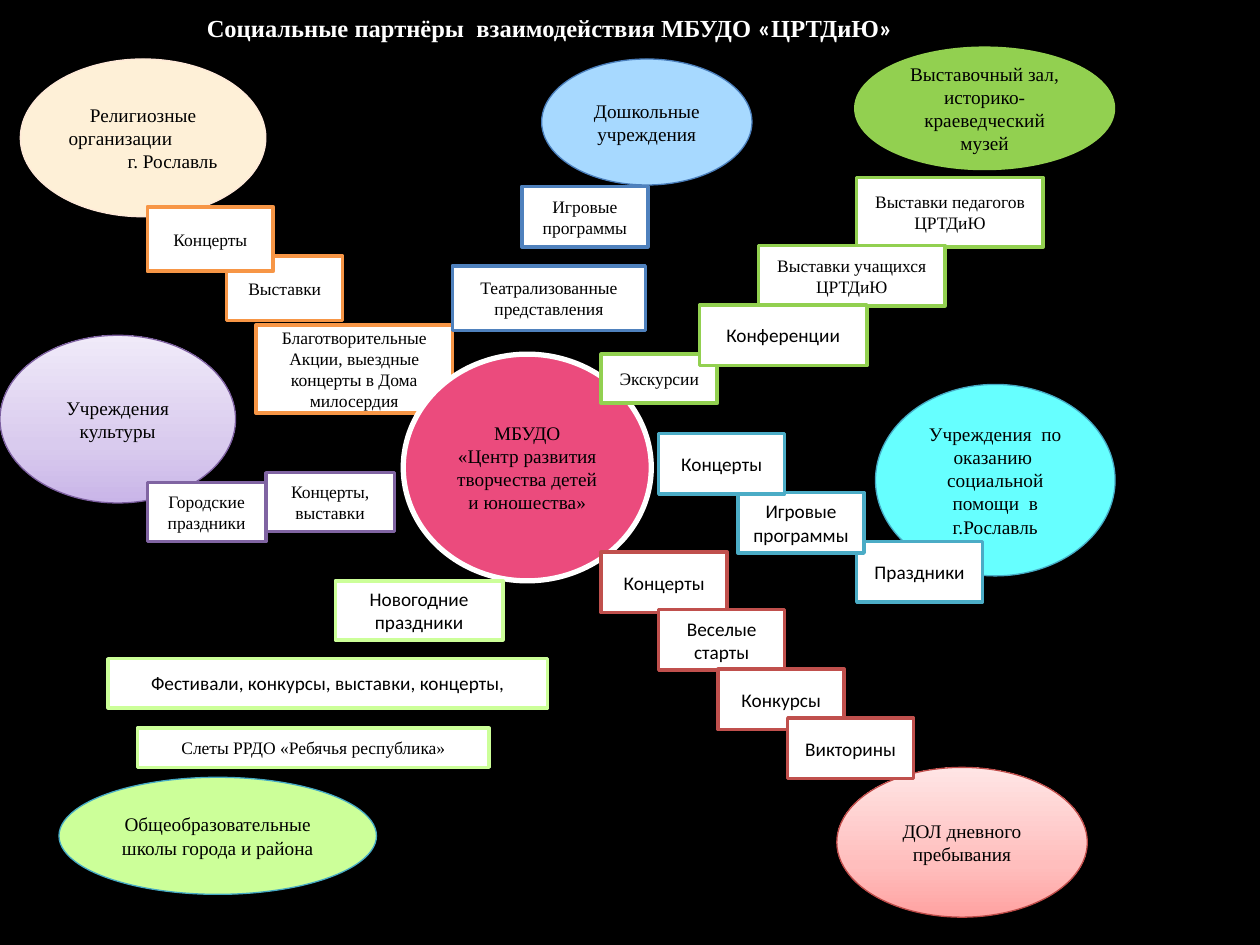
from copy import deepcopy

from pptx import Presentation
from pptx.dml.color import RGBColor
from pptx.enum.shapes import MSO_SHAPE as SHAPE
from pptx.enum.text import MSO_ANCHOR as ANCHOR, MSO_AUTO_SIZE as AUTO, PP_ALIGN as ALIGN
from pptx.oxml.ns import qn
from pptx.util import Cm, Pt

COLORS = {
    "black": "000000", "white": "FFFFFF", "pink": "EB4B7D",
    "sky": "A7D9FF", "sky_edge": "4A7EBB", "blue": "4F81BD",
    "cyan": "66FFFF", "teal_edge": "46AAC5", "teal": "4BACC6",
    "lime": "CCFF99", "green": "92D050", "orange": "F79646",
    "cream": "FEF0D7", "cream_edge": "FEE8D8",
    "purple": "8064A2", "purple_edge": "7D60A0",
    "red": "C0504D", "red_edge": "BE4B48",
    "lilac_1": "C9B5E8", "lilac_2": "D9CBEE", "lilac_3": "F0EAF9",
    "rose_1": "FFA2A1", "rose_2": "FFBEBD", "rose_3": "FFE5E5",
}
GRADIENTS = {
    "lilac": ("lilac_1", "lilac_2", "lilac_3"),
    "rose": ("rose_1", "rose_2", "rose_3"),
}
SERIF, SANS = "Times New Roman", "Calibri"
TEXT = {"partner": (SERIF, 11), "serif": (SERIF, 10), "sans": (SANS, 11)}


def rgb(name):
    return RGBColor.from_string(COLORS[name])


def add_run(p, text, font, size, color, bold=False):
    r = p.add_run()
    r.text = text
    r.font.name = font
    r.font.size = Pt(size)
    r.font.bold = bold
    r.font.color.rgb = rgb(color)


prs = Presentation()
prs.slide_width, prs.slide_height = Cm(25.4), Cm(19.05)
s = prs.slides.add_slide(prs.slide_layouts[5])
s.background.fill.solid()
s.background.fill.fore_color.rgb = rgb("black")

title = s.shapes.title
title.left, title.top, title.width, title.height = Cm(0), Cm(0), Cm(22.16), Cm(1.1)
tf = title.text_frame
tf.auto_size = AUTO.NONE
tf.word_wrap = True
tf.vertical_anchor = ANCHOR.MIDDLE
p = tf.paragraphs[0]
p.alignment = ALIGN.CENTER
for text, font in [
    ("Социальные партнёры  взаимодействия МБУДО ", SERIF),
    ("«", SANS), ("ЦРТДиЮ", SERIF), ("»", SANS),
]:
    add_run(p, text, font, 14, "white", True)

nodes = [
    ("serif", "Благотворительные\nАкции, выездные концерты в Дома\nмилосердия", 5.16, 6.55, 3.96, 1.78, "white", "orange", 2),
    ("partner", "МБУДО\n«Центр развития творчества детей и юношества»", 8.13, 7.14, 5, 4.57, "pink", "white", 3),
    ("partner", "Дошкольные учреждения", 10.92, 1.19, 4.24, 2.54, "sky", "sky_edge", 0.75),
    ("partner", "Учреждения  по оказанию  социальной помощи  в г.Рославль", 17.65, 7.75, 4.83, 3.86, "cyan", "teal_edge", 0.75),
    ("partner", "Учреждения культуры", 0, 6.76, 4.75, 3.38, "lilac", "purple_edge", 0.75),
    ("partner", "Общеобразовательные школы города и района", 1.19, 15.67, 6.4, 2.36, "lime", "teal_edge", 0.75),
    ("partner", "ДОЛ дневного пребывания", 16.87, 15.47, 5.05, 3.02, "rose", "red_edge", 0.75),
    ("serif", "Игровые программы", 10.52, 3.76, 2.54, 1.22, "white", "blue", 2),
    ("serif", "Театрализованные представления", 9.12, 5.36, 3.89, 1.3, "white", "blue", 2),
    ("serif", "Выставки педагогов ЦРТДиЮ", 17.27, 3.58, 3.76, 1.4, "white", "green", 2),
    ("serif", "Выставки учащихся ЦРТДиЮ", 15.29, 4.95, 3.76, 1.22, "white", "green", 2),
    ("serif", "Экскурсии", 12.12, 7.14, 2.34, 0.99, "white", "green", 2),
    ("sans", "Конференции", 14.1, 6.15, 3.38, 1.22, "white", "green", 2),
    ("sans", "Праздники", 17.27, 10.92, 2.54, 1.22, "white", "teal", 2),
    ("sans", "Игровые программы", 14.88, 9.93, 2.54, 1.22, "white", "teal", 2),
    ("sans", "Концерты", 13.28, 8.74, 2.54, 1.22, "white", "teal", 2),
    ("sans", "Концерты", 12.12, 11.13, 2.54, 1.22, "white", "red", 2),
    ("sans", "Веселые старты", 13.28, 12.29, 2.54, 1.22, "white", "red", 2),
    ("sans", "Конкурсы", 14.48, 13.49, 2.54, 1.22, "white", "red", 2),
    ("sans", "Викторины", 15.88, 14.48, 2.54, 1.22, "white", "red", 2),
    ("serif", "Слеты РРДО «Ребячья республика»", 2.77, 14.68, 7.09, 0.79, "white", "lime", 2),
    ("sans", "Фестивали, конкурсы, выставки, концерты,", 2.18, 13.28, 8.86, 0.99, "white", "lime", 2),
    ("sans", "Новогодние праздники", 6.76, 11.71, 3.38, 1.19, "white", "lime", 2),
    ("serif", "Концерты, выставки", 5.36, 9.53, 2.59, 1.19, "white", "purple", 2),
    ("serif", "Выставки", 4.57, 5.16, 2.34, 1.3, "white", "orange", 2),
    ("serif", "Городские праздники", 2.97, 9.73, 2.39, 1.19, "white", "purple", 2),
    ("partner", "Выставочный зал, историко- краеведческий музей", 17.27, 0.99, 5.16, 2.39, "green", "green", 3),
    ("partner", "Религиозные\nорганизации\nг. Рославль", 0.41, 1.19, 4.95, 3.18, "cream", "cream_edge", 0.75),
    ("serif", "Концерты", 2.97, 4.17, 2.54, 1.3, "white", "orange", 2),
]
alignments = {"организации": ALIGN.LEFT, "г. Рославль": ALIGN.RIGHT}

for kind, text, x, y, w, h, fill, line, width in nodes:
    shape = SHAPE.OVAL if kind == "partner" else SHAPE.RECTANGLE
    sp = s.shapes.add_shape(shape, Cm(x), Cm(y), Cm(w), Cm(h))
    sp.shadow.inherit = False
    if fill in GRADIENTS:
        sp.fill.gradient()
        sp.fill.gradient_angle = 90
        gs_list = sp._element.spPr.find(qn("a:gradFill")).find(qn("a:gsLst"))
        gs_list.insert(1, deepcopy(gs_list[0]))
        for stop, position, name in zip(sp.fill.gradient_stops, (0, 0.35, 1), GRADIENTS[fill]):
            stop.position = position
            stop.color.rgb = rgb(name)
    else:
        sp.fill.solid()
        sp.fill.fore_color.rgb = rgb(fill)
    sp.line.color.rgb = rgb(line)
    sp.line.width = Pt(width)
    tf = sp.text_frame
    tf.word_wrap = True
    tf.vertical_anchor = ANCHOR.MIDDLE
    for i, part in enumerate(text.split("\n")):
        p = tf.add_paragraph() if i else tf.paragraphs[0]
        p.alignment = alignments.get(part, ALIGN.CENTER)
        add_run(p, part, *TEXT[kind], "black")

prs.save("out.pptx")
